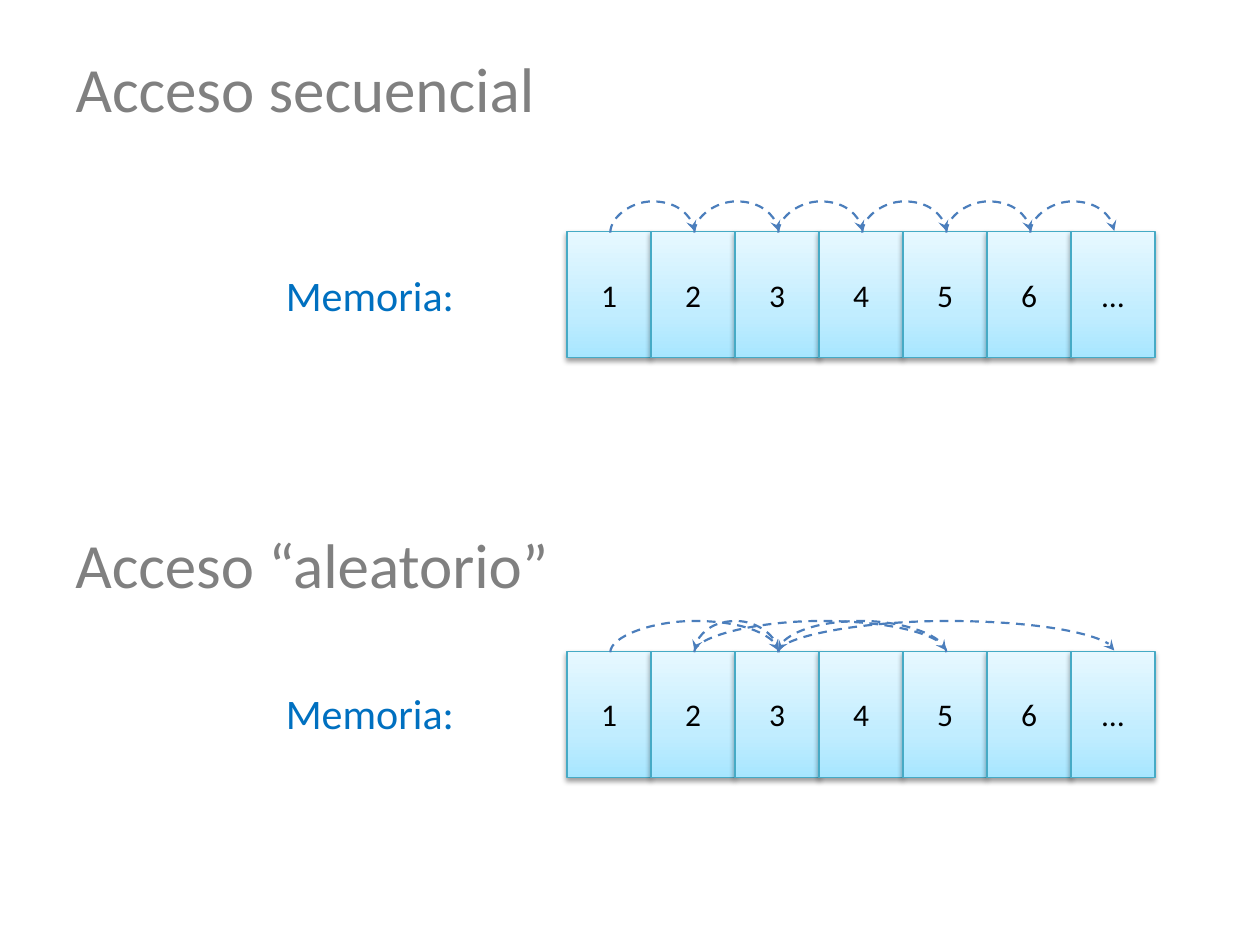
from copy import deepcopy
from dataclasses import dataclass

from lxml.etree import SubElement
from pptx import Presentation
from pptx.dml.color import RGBColor
from pptx.enum.dml import MSO_LINE_DASH_STYLE as Dash
from pptx.enum.shapes import MSO_CONNECTOR as Connector, MSO_SHAPE as Preset
from pptx.enum.text import MSO_ANCHOR as Anchor, PP_ALIGN as Align
from pptx.oxml.ns import qn
from pptx.util import Emu, Inches, Pt

GREY = RGBColor(0x80, 0x80, 0x80)
BLUE = RGBColor(0x00, 0x70, 0xC0)
BLACK = RGBColor(0x00, 0x00, 0x00)
CELL_LINE = RGBColor(0x46, 0xAA, 0xC5)
ARROW = RGBColor(0x4B, 0x7E, 0xBC)
CELL_STOPS = (
    (0, RGBColor(0xA7, 0xE6, 0xFF)),
    (0.35, RGBColor(0xC1, 0xED, 0xFF)),
    (1, RGBColor(0xE7, 0xF8, 0xFF)),
)

HEADING = {"name": "Calibri", "size": Pt(36), "color": GREY}
LABEL = {"name": "Calibri", "size": Pt(24), "color": BLUE}
CELL = {"name": "Calibri", "size": Pt(18), "color": BLACK}

CELL_WIDTH = Inches(10) / 15
CELL_HEIGHT = Inches(1)
MEMORY_LEFT = Inches(4.5)
CELL_TEXTS = ("1", "2", "3", "4", "5", "6", "…")
ARC_RISE = Inches(0.25)
ARC_DEPTH = Pt(1)


@dataclass(frozen=True)
class Access:
    """One kind of memory access; visits are cell indexes in order."""
    heading: str
    heading_top: float
    memory_top: float
    label_top: float
    visits: tuple[int, ...]


ACCESSES = (
    Access("Acceso secuencial", 0.3, 1.84, 2.09, tuple(range(7))),
    Access("Acceso “aleatorio”", 4.08, 5.17, 5.41, (0, 2, 1, 4, 2, 6)),
)


def write(shape, text: str, style: dict, align=Align.LEFT, anchor=Anchor.MIDDLE) -> None:
    frame = shape.text_frame
    frame.word_wrap = True
    frame.vertical_anchor = anchor
    para = frame.paragraphs[0]
    para.alignment = align
    span = para.add_run()
    span.text = text
    for name, value in style.items():
        if name == "color":
            span.font.color.rgb = value
        else:
            setattr(span.font, name, value)


def add_heading(page, access: Access) -> None:
    """Use the title placeholder for the first heading and a text box after it."""
    place = (Inches(0.5), Inches(access.heading_top), Inches(9), Inches(0.78))
    if access is ACCESSES[0]:
        box = page.shapes.title
        box.left, box.top, box.width, box.height = place
    else:
        box = page.shapes.add_textbox(*place)
    write(box, access.heading, HEADING)


def add_cell(page, column: int, top: int, text: str) -> None:
    left = MEMORY_LEFT + column * CELL_WIDTH
    cell = page.shapes.add_shape(
        Preset.RECTANGLE, Emu(round(left)), top, Emu(round(CELL_WIDTH)), CELL_HEIGHT)
    cell.fill.gradient()
    cell.fill.gradient_angle = 90
    properties = cell._element.spPr
    stops = properties.find(".//" + qn("a:gsLst"))
    stops.append(deepcopy(stops[0]))
    for stop, (position, color) in zip(cell.fill.gradient_stops, CELL_STOPS):
        stop.position = position
        stop.color.rgb = color
    cell.line.color.rgb = CELL_LINE
    cell.line.width = Pt(0.75)

    cell.shadow.inherit = False
    shadow = SubElement(
        properties.find(qn("a:effectLst")), qn("a:outerShdw"),
        blurRad=str(Pt(3.1)), dist=str(Pt(1.6)), dir="5400000", rotWithShape="0")
    shade = SubElement(shadow, qn("a:srgbClr"), val=str(BLACK))
    SubElement(shade, qn("a:alpha"), val="38000")
    write(cell, text, CELL, Align.CENTER)


def add_arc(page, start: int, end: int, memory_top: int) -> None:
    """Draw a dashed arrow over the cells, as a flat connector turned upright."""
    middle = MEMORY_LEFT + (start + end + 1) / 2 * CELL_WIDTH + Inches(0.01)
    reach = abs(end - start) * CELL_WIDTH
    corners = (middle - ARC_DEPTH / 2, memory_top - reach / 2,
               middle + ARC_DEPTH / 2, memory_top + reach / 2)
    arc = page.shapes.add_connector(Connector.CURVE, *(Emu(round(c)) for c in corners))
    arc.line.color.rgb = ARROW
    arc.line.width = Pt(1.25)
    arc.line.dash_style = Dash.DASH

    properties = arc._element.spPr
    frame = properties.find(qn("a:xfrm"))
    frame.set("flipV", "1")
    if end > start:
        frame.set("flipH", "1")
        frame.set("rot", "5400000")
    else:
        frame.set("rot", "16200000")
    bend = round(ARC_RISE / ARC_DEPTH * 100000)
    SubElement(properties.find(".//" + qn("a:avLst")), qn("a:gd"),
               name="adj1", fmla=f"val {bend}")
    SubElement(properties.find(qn("a:ln")), qn("a:tailEnd"), type="stealth")
    SubElement(properties, qn("a:effectLst"))


def add_access(page, access: Access) -> None:
    add_heading(page, access)
    top = Inches(access.memory_top)
    for column, text in enumerate(CELL_TEXTS):
        add_cell(page, column, top, text)
    for start, end in zip(access.visits, access.visits[1:]):
        add_arc(page, start, end, top)
    label = page.shapes.add_textbox(
        Inches(2.17), Inches(access.label_top), Inches(1.92), Inches(0.5))
    write(label, "Memoria:", LABEL, anchor=Anchor.TOP)


def main() -> None:
    deck = Presentation()
    deck.slide_width, deck.slide_height = Inches(10), Inches(7.5)
    page = deck.slides.add_slide(deck.slide_layouts[5])
    for access in ACCESSES:
        add_access(page, access)
    deck.save("out.pptx")


if __name__ == "__main__":
    main()
